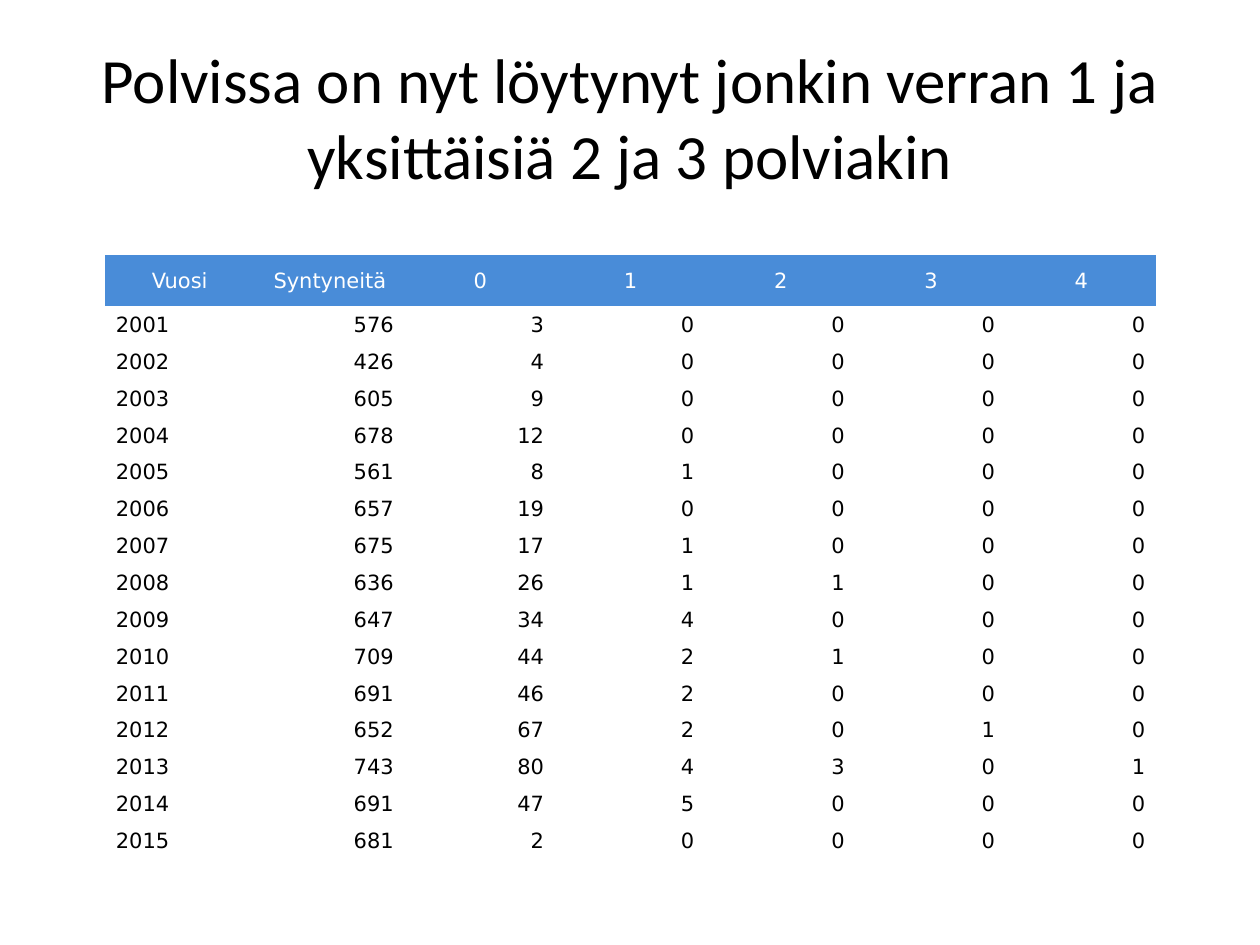
from pptx import Presentation
from pptx.dml.color import RGBColor
from pptx.enum.text import MSO_ANCHOR as Anchor, PP_ALIGN as Align
from pptx.oxml.ns import qn
from pptx.util import Inches, Pt

TITLE = "Polvissa on nyt löytynyt jonkin verran 1 ja yksittäisiä 2 ja 3 polviakin"
HEADINGS = ["Vuosi", "Syntyneitä", "0", "1", "2", "3", "4"]
YEARS = [
    (2001, 576, 3, 0, 0, 0, 0),
    (2002, 426, 4, 0, 0, 0, 0),
    (2003, 605, 9, 0, 0, 0, 0),
    (2004, 678, 12, 0, 0, 0, 0),
    (2005, 561, 8, 1, 0, 0, 0),
    (2006, 657, 19, 0, 0, 0, 0),
    (2007, 675, 17, 1, 0, 0, 0),
    (2008, 636, 26, 1, 1, 0, 0),
    (2009, 647, 34, 4, 0, 0, 0),
    (2010, 709, 44, 2, 1, 0, 0),
    (2011, 691, 46, 2, 0, 0, 0),
    (2012, 652, 67, 2, 0, 1, 0),
    (2013, 743, 80, 4, 3, 0, 1),
    (2014, 691, 47, 5, 0, 0, 0),
    (2015, 681, 2, 0, 0, 0, 0),
]
NO_GRID_STYLE = "{2D5ABB26-0587-4C30-8999-92F81FD0307C}"
HEADER_HEIGHT = Inches(0.41)
EDGE, INDENT = Inches(0.01), Inches(0.09)


def color(value):
    """Return the colour for a hex string."""
    return RGBColor.from_string(value)


def format_text(para, font_name, size, hex_color, align):
    """Set the alignment of a paragraph and the font of its runs."""
    para.alignment = align
    for span in para.runs:
        span.font.name = font_name
        span.font.size = Pt(size)
        span.font.color.rgb = color(hex_color)


def add_title(page, left, top, width, height):
    """Place the centred slide title in the given box."""
    box = page.shapes.add_textbox(left, top, width, height)
    frame = box.text_frame
    frame.word_wrap = True
    frame.vertical_anchor = Anchor.MIDDLE
    frame.text = TITLE
    format_text(frame.paragraphs[0], "Calibri", 36, "000000", Align.CENTER)


def fill_cell(cell, value, fill, hex_color, align):
    """Write one table cell, indented on the side its text is aligned to."""
    cell.fill.solid()
    cell.fill.fore_color.rgb = color(fill)
    cell.vertical_anchor = Anchor.MIDDLE
    cell.margin_left = INDENT if align == Align.LEFT else EDGE
    cell.margin_right = INDENT if align == Align.RIGHT else EDGE
    cell.margin_top, cell.margin_bottom = EDGE, 0
    cell.text = str(value)
    format_text(cell.text_frame.paragraphs[0], "DejaVu Sans", 12, hex_color, align)


def add_knee_table(page, left, top, width, height):
    """Place the table of knee grades by birth year in the given box."""
    box = page.shapes.add_table(len(YEARS) + 1, len(HEADINGS), left, top, width, height)
    for style in box.element.iter(qn("a:tableStyleId")):
        style.text = NO_GRID_STYLE
    table = box.table
    table.horz_banding = False
    for column in table.columns:
        column.width = width // len(HEADINGS)
    for row in table.rows:
        row.height = (height - HEADER_HEIGHT) // len(YEARS)
    table.rows[0].height = HEADER_HEIGHT

    for column, heading in enumerate(HEADINGS):
        fill_cell(table.cell(0, column), heading, "498CD8", "FFFFFF", Align.CENTER)
    for row, values in enumerate(YEARS, start=1):
        for column, value in enumerate(values):
            align = Align.RIGHT if column else Align.LEFT
            fill_cell(table.cell(row, column), value, "FFFFFF", "000000", align)


def main():
    """Build the slide and save the deck."""
    deck = Presentation()
    deck.slide_width, deck.slide_height = Inches(10), Inches(7.5)
    page = deck.slides.add_slide(deck.slide_layouts[6])
    add_title(page, Inches(0.5), Inches(0.3), Inches(9), Inches(1.25))
    add_knee_table(page, Inches(0.83), Inches(2.02), Inches(8.35), Inches(4.8))
    deck.save("out.pptx")


if __name__ == "__main__":
    main()
